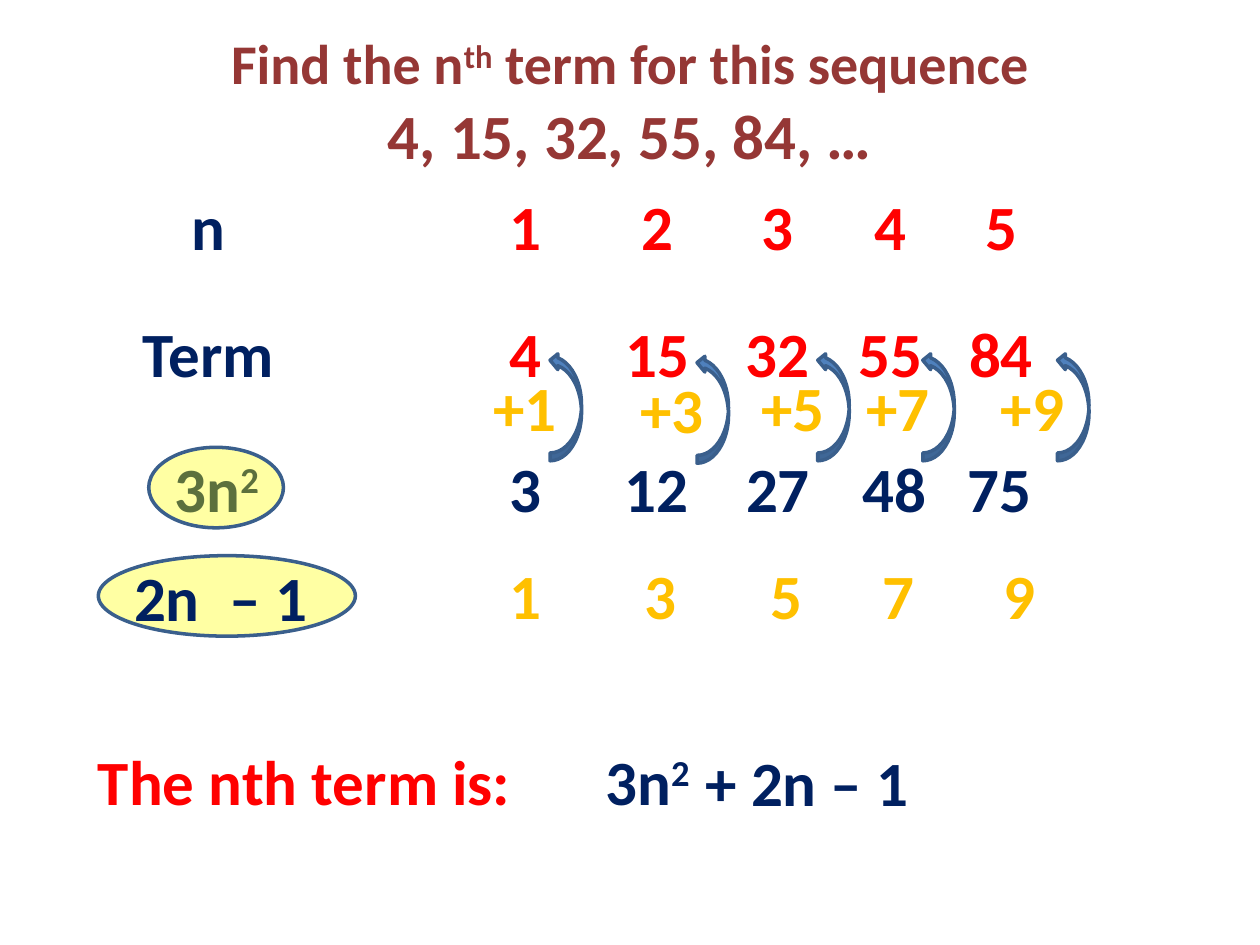
from dataclasses import dataclass

from lxml import etree
from pptx import Presentation
from pptx.dml.color import RGBColor
from pptx.enum import shapes, text
from pptx.oxml.ns import qn
from pptx.util import Pt


@dataclass(frozen=True)
class Theme:
    font: str = "Calibri"
    heading: str = "953735"
    navy: str = "002060"
    red: str = "FF0000"
    gold: str = "FFC000"
    arrow: str = "4F81BD"
    outline: str = "3A5F8C"
    highlight: str = "FFFF00"
    heading_size: int = 32
    size: int = 36


THEME = Theme()
LINE_HEIGHT = 51

# A part between carets is superscript.
TITLE = [("Find the n^th^ term for this sequence", THEME.heading_size),
         ("4, 15, 32, 55, 84, …", THEME.size)]

COLUMNS = [300, 375.5, 444.2, 508.7, 572]
STEP_COLUMNS = [300, 384, 453, 513, 590]
DIFFERENCE_COLUMNS = [300, 377.3, 449.3, 513.4, 582.5]

# values, column centres, top, colour
ROWS = [
    ("1 2 3 4 5", COLUMNS, 103.7, THEME.red),
    ("4 15 32 55 84", COLUMNS, 176.4, THEME.red),
    ("3 12 27 48 75", [300, 375, 444.6, 511, 571.3], 253.4, THEME.navy),
    ("1 3 5 7 9", DIFFERENCE_COLUMNS, 314.5, THEME.gold),
]

STEPS = ["+1", "+3", "+5", "+7", "+9"]
STEP_DROPS = [0, 1.4, 0, 0, 0]
STEP_TOP = 206.8
ARROW_SIZE = (62, 18)
ARROW_OFFSET = 23.3
ARROW_MIDDLE = 232.3

# text, centre, top, width, colour
ROW_LABELS = [
    ("n", 119, 103.7, 34, THEME.navy),
    ("Term", 119, 176.4, 90, THEME.navy),
    ("3n^2^", 123.8, 253.4, 65, THEME.navy),
]
LINEAR_LABELS = [
    ("2n", 95.4, 315.4, 52.6, THEME.navy),
    ("– 1", 153.4, 315.4, 59, THEME.navy),
]
ANSWER = [
    ("The nth term is:", 173.9, 420.5, 252.7, THEME.red),
    ("3n^2^", 370, 420.5, 65, THEME.navy),
    ("+ 2n – 1", 461.2, 421.2, 131.8, THEME.navy),
]
SQUARE_RING = (85, 255.6, 77, 46)
LINEAR_RING = (56.2, 317.5, 146.9, 46)


def write(paragraph, wording, size, colour):
    paragraph.alignment = text.PP_ALIGN.CENTER
    for index, part in enumerate(wording.split("^")):
        span = paragraph.add_run()
        span.text = part
        span.font.name = THEME.font
        span.font.size = Pt(size)
        span.font.bold = True
        span.font.color.rgb = RGBColor.from_string(colour)
        if index % 2:
            span.font._element.set("baseline", "30000")


def add_label(page, wording, centre, top, width, colour):
    box = page.shapes.add_textbox(Pt(centre - width / 2), Pt(top), Pt(width), Pt(LINE_HEIGHT))
    box.text_frame.word_wrap = False
    write(box.text_frame.paragraphs[0], wording, THEME.size, colour)


def add_title(page):
    box = page.shapes.add_textbox(Pt(20), Pt(13), Pt(680), Pt(90))
    frame = box.text_frame
    frame.word_wrap = True
    for index, (wording, size) in enumerate(TITLE):
        paragraph = frame.add_paragraph() if index else frame.paragraphs[0]
        write(paragraph, wording, size, THEME.heading)


def add_figure(page, kind, bounds, fill):
    figure = page.shapes.add_shape(kind, *map(Pt, bounds))
    figure.shadow.inherit = False
    figure.fill.solid()
    figure.fill.fore_color.rgb = RGBColor.from_string(fill)
    figure.line.color.rgb = RGBColor.from_string(THEME.outline)
    figure.line.width = Pt(2)
    return figure


def add_ring(page, bounds):
    ring = add_figure(page, shapes.MSO_SHAPE.OVAL, bounds, THEME.highlight)
    colour = ring.fill._xPr.find(qn("a:solidFill"))[0]
    etree.SubElement(colour, qn("a:alpha")).set("val", "36000")


def add_step(page, wording, centre, drop):
    width, height = ARROW_SIZE
    bounds = (centre + ARROW_OFFSET - width / 2, ARROW_MIDDLE + drop - height / 2, width, height)
    arrow = add_figure(page, shapes.MSO_SHAPE.CURVED_UP_ARROW, bounds, THEME.arrow)
    arrow.rotation = 270
    add_label(page, wording, centre, STEP_TOP + drop, 51, THEME.gold)


def main():
    deck = Presentation()
    deck.slide_width, deck.slide_height = Pt(720), Pt(540)
    page = deck.slides.add_slide(deck.slide_layouts[6])

    add_title(page)
    for label in ROW_LABELS:
        add_label(page, *label)
    for values, centres, top, colour in ROWS:
        for value, centre in zip(values.split(), centres):
            add_label(page, value, centre, top, 16 + 18 * len(value), colour)
    for step in zip(STEPS, STEP_COLUMNS, STEP_DROPS):
        add_step(page, *step)
    for ring in (SQUARE_RING, LINEAR_RING):
        add_ring(page, ring)
    for label in LINEAR_LABELS + ANSWER:
        add_label(page, *label)

    deck.save("out.pptx")


if __name__ == "__main__":
    main()
